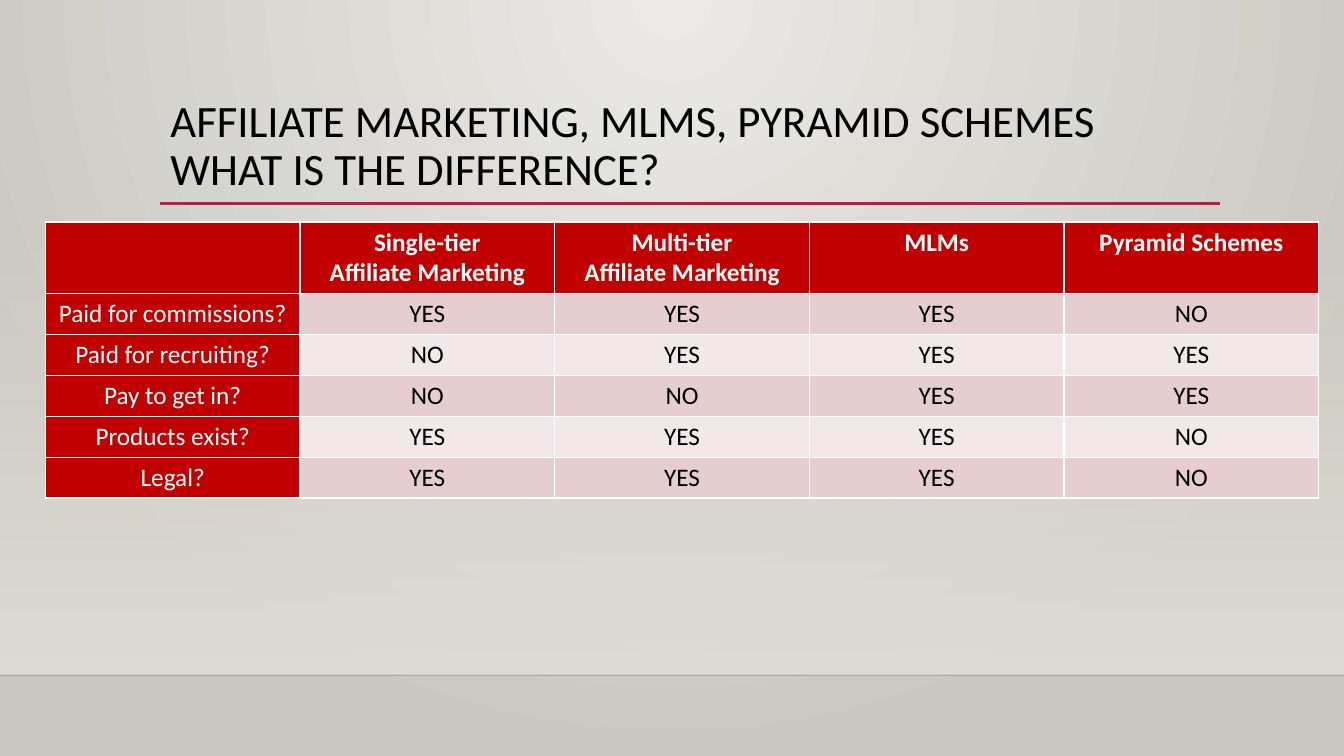
from dataclasses import dataclass

from lxml import etree
from pptx import Presentation
from pptx.dml.color import RGBColor as Color
from pptx.enum.shapes import MSO_CONNECTOR as Connector, MSO_SHAPE as Preset
from pptx.enum.text import MSO_ANCHOR as Anchor, MSO_AUTO_SIZE as AutoSize, PP_ALIGN as Align
from pptx.oxml import parse_xml
from pptx.oxml.ns import nsdecls, qn
from pptx.slide import Slide
from pptx.util import Pt


@dataclass(frozen=True)
class Theme:
    font: str = "Calibri"
    title_size: float = 32
    table_size: float = 18
    ink: str = "000000"
    white: str = "FFFFFF"
    header: str = "C00000"
    bands: tuple[str, str] = ("E6CDCF", "F3E8E9")
    accent: str = "B71E42"
    floor_line: str = "000001"
    glow: str = "ECEAE7"
    edge: str = "CAC7C1"
    wall: str = "DFDBD5"


@dataclass(frozen=True)
class Rule:
    left: float
    right: float
    top: float
    width: float
    color: str
    opacity: int = 100


@dataclass(frozen=True)
class Stop:
    position: int
    color: str
    opacity: int = 100


THEME = Theme()
SLIDE_WIDTH, SLIDE_HEIGHT = 960, 540
FLOOR_TOP = 482.4
TABLE_LEFT, TABLE_TOP, TABLE_WIDTH = 32.4, 158.6, 909.5
HEADER_HEIGHT, ROW_HEIGHT = 51.2, 29.2
TITLE = "AFFILIATE MARKETING, MLMS, PYRAMID SCHEMES\vWHAT IS THE DIFFERENCE?"

RULES = (
    Rule(0, SLIDE_WIDTH, FLOOR_TOP, 1, THEME.floor_line, 20),
    Rule(114.5, 871.2, 145.4, 2.5, THEME.accent),
)

ROWS = (
    ("", "Single-tier\nAffiliate Marketing", "Multi-tier\nAffiliate Marketing",
     "MLMs", "Pyramid Schemes"),
    ("Paid for commissions?", "YES", "YES", "YES", "NO"),
    ("Paid for recruiting?", "NO", "YES", "YES", "YES"),
    ("Pay to get in?", "NO", "NO", "YES", "YES"),
    ("Products exist?", "YES", "YES", "YES", "NO"),
    ("Legal?", "YES", "YES", "YES", "NO"),
)


def set_gradient(owner: etree._Element, stops: tuple[Stop, ...], direction: str) -> None:
    stop_xml = "".join(
        f'<a:gs pos="{stop.position * 1000}"><a:srgbClr val="{stop.color}">'
        f'<a:alpha val="{stop.opacity * 1000}"/></a:srgbClr></a:gs>'
        for stop in stops
    )
    gradient = parse_xml(
        f'<a:gradFill {nsdecls("a")} rotWithShape="1">'
        f"<a:gsLst>{stop_xml}</a:gsLst>{direction}</a:gradFill>"
    )
    owner.replace(owner.find(qn("a:solidFill")), gradient)


def paint_background(slide: Slide) -> None:
    slide.background.fill.solid()
    set_gradient(
        slide.element.find(".//" + qn("p:bgPr")),
        (Stop(0, THEME.glow), Stop(100, THEME.edge)),
        '<a:path path="circle"><a:fillToRect l="43000" r="43000" b="100000"/></a:path>',
    )


def add_wall(slide: Slide) -> None:
    top = 159.1
    shape = slide.shapes.add_shape(
        Preset.RECTANGLE, Pt(0), Pt(top), Pt(SLIDE_WIDTH), Pt(FLOOR_TOP - top)
    )
    shape.shadow.inherit = False
    shape.line.fill.background()
    shape.fill.solid()
    set_gradient(
        shape.element.spPr,
        (Stop(0, THEME.wall, 0), Stop(100, THEME.wall)),
        '<a:lin ang="5400000" scaled="0"/>',
    )


def add_rule(slide: Slide, rule: Rule) -> None:
    connector = slide.shapes.add_connector(
        Connector.STRAIGHT, Pt(rule.left), Pt(rule.top), Pt(rule.right), Pt(rule.top)
    )
    connector.line.width = Pt(rule.width)
    connector.line.color.rgb = Color.from_string(rule.color)
    properties = connector.element.spPr
    if rule.opacity < 100:
        color = properties.find(".//" + qn("a:srgbClr"))
        etree.SubElement(color, qn("a:alpha")).set("val", str(rule.opacity * 1000))
    etree.SubElement(properties, qn("a:effectLst"))


def format_text(frame, size: float, color: str, align: Align, bold: bool = False) -> None:
    for paragraph in frame.paragraphs:
        paragraph.alignment = align
        for run in paragraph.runs:
            run.font.name = THEME.font
            run.font.size = Pt(size)
            run.font.bold = bold
            run.font.color.rgb = Color.from_string(color)


def write_title(slide: Slide) -> None:
    title = slide.shapes.title
    title.left, title.top, title.width, title.height = Pt(114.5), Pt(63.4), Pt(756), Pt(82.8)
    frame = title.text_frame
    frame.text = TITLE
    frame.word_wrap = True
    frame.auto_size = AutoSize.NONE
    frame.vertical_anchor = Anchor.MIDDLE
    frame.paragraphs[0].line_spacing = 0.9
    format_text(frame, THEME.title_size, THEME.ink, Align.LEFT)
    title.element.getparent().append(title.element)


def add_comparison(slide: Slide) -> None:
    height = HEADER_HEIGHT + ROW_HEIGHT * (len(ROWS) - 1)
    table = slide.shapes.add_table(
        len(ROWS), len(ROWS[0]), Pt(TABLE_LEFT), Pt(TABLE_TOP), Pt(TABLE_WIDTH), Pt(height)
    ).table
    for row_index, row in enumerate(ROWS):
        is_header = row_index == 0
        table.rows[row_index].height = Pt(HEADER_HEIGHT if is_header else ROW_HEIGHT)
        for column_index, text in enumerate(row):
            is_label = is_header or column_index == 0
            fill = THEME.header if is_label else THEME.bands[(row_index - 1) % 2]
            cell = table.cell(row_index, column_index)
            cell.fill.solid()
            cell.fill.fore_color.rgb = Color.from_string(fill)
            cell.text_frame.text = text
            color = THEME.white if is_label else THEME.ink
            format_text(cell.text_frame, THEME.table_size, color, Align.CENTER, is_header)


def main() -> None:
    presentation = Presentation()
    presentation.slide_width = Pt(SLIDE_WIDTH)
    presentation.slide_height = Pt(SLIDE_HEIGHT)
    slide = presentation.slides.add_slide(presentation.slide_layouts[5])
    paint_background(slide)
    add_wall(slide)
    for rule in RULES:
        add_rule(slide, rule)
    write_title(slide)
    add_comparison(slide)
    presentation.save("out.pptx")


if __name__ == "__main__":
    main()
